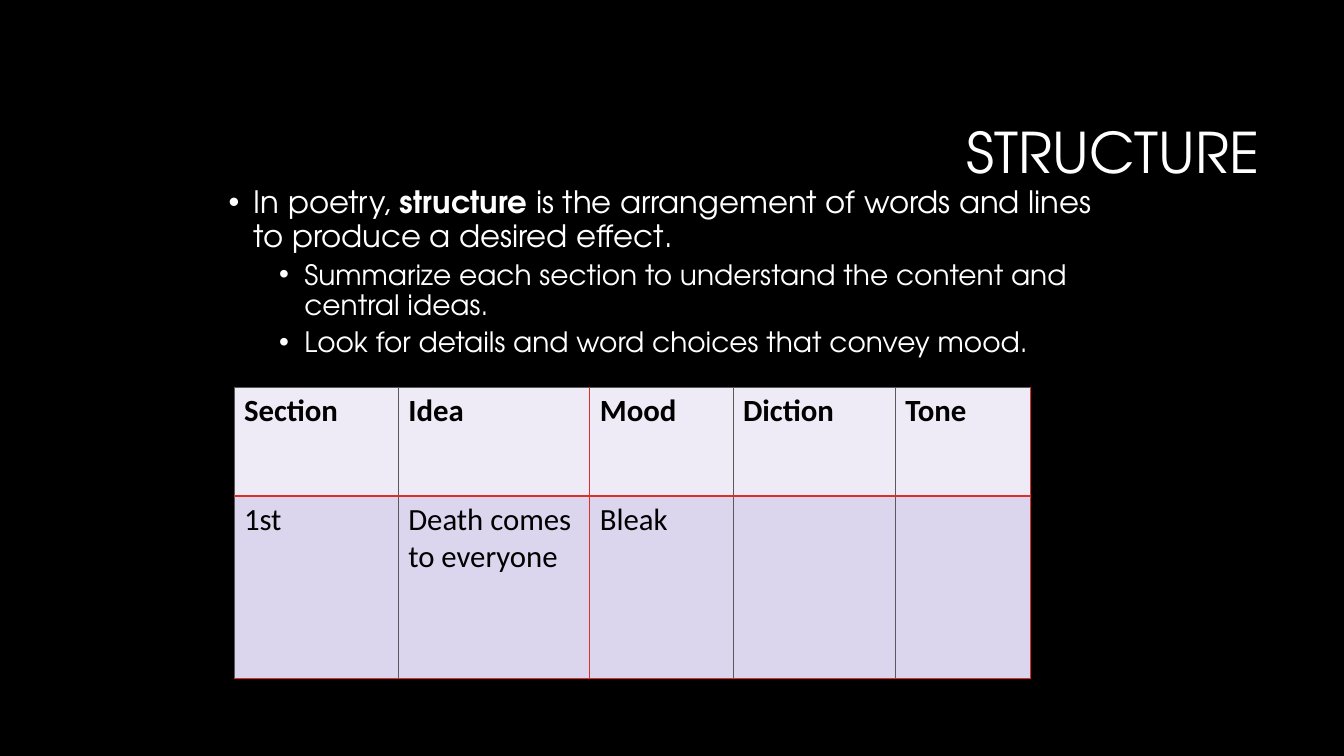
from lxml import etree
from pptx import Presentation
from pptx.dml.color import RGBColor
from pptx.enum.text import MSO_ANCHOR, PP_ALIGN
from pptx.oxml.ns import qn
from pptx.util import Inches, Pt

RIGHT = PP_ALIGN.RIGHT
TOP, MIDDLE = MSO_ANCHOR.TOP, MSO_ANCHOR.MIDDLE

HEADING_FONT = "TeX Gyre Adventor"
TABLE_FONT = "Calibri"
BLACK, WHITE, RED, GRAY = "000000", "FFFFFF", "DF2E28", "595959"

# Text, level, size and space before; each run is (text, bold)
BULLETS = [
    ([("In poetry, ", False), ("structure ", True),
      ("is the arrangement of words and lines to produce a desired effect.", False)], 0, 22, 0),
    ([("Summarize each section to understand the content and central ideas.", False)], 1, 20, 5),
    ([("Look for details and word choices that convey mood.", False)], 1, 20, 5),
]

COLUMN_WIDTHS = [1.63, 1.9, 1.42, 1.61, 1.34]
ROW_HEIGHTS = [1.08, 1.81]
ROW_FILLS = ["EEEBF7", "DBD5EE"]
ROWS = [
    ["Section", "Idea", "Mood", "Diction", "Tone"],
    ["1st", "Death comes to everyone", "Bleak", "", ""],
]
# Colour and width of the rules, from left to right and from top to bottom
THIN_GRAY, THIN_RED, THICK_RED = (GRAY, 0.5), (RED, 1), (RED, 1.5)
COLUMN_RULES = [THIN_GRAY, THIN_GRAY, THIN_RED, THIN_GRAY, THIN_GRAY, THIN_RED]
ROW_RULES = [THIN_GRAY, THICK_RED, THIN_RED]


def color(value):
    return RGBColor.from_string(value)


def add_run(paragraph, text, font_name, size, font_color, bold=False):
    run = paragraph.add_run()
    run.text = text
    run.font.name = font_name
    run.font.size = Pt(size)
    run.font.bold = bold
    run.font.color.rgb = color(font_color)


def add_text_frame(slide, left, top, width, height, anchor):
    box = slide.shapes.add_textbox(Inches(left), Inches(top), Inches(width), Inches(height))
    frame = box.text_frame
    frame.word_wrap = True
    frame.vertical_anchor = anchor
    return frame


def add_title(slide, text):
    paragraph = add_text_frame(slide, 3.17, 0.84, 9.42, 1.41, MIDDLE).paragraphs[0]
    paragraph.alignment = RIGHT
    paragraph.line_spacing = 0.9
    add_run(paragraph, text, HEADING_FONT, 40, WHITE)


def set_bullet(paragraph, level):
    properties = paragraph._p.get_or_add_pPr()
    properties.set("marL", str(Inches(0.25 + 0.5 * level)))
    properties.set("indent", str(Inches(-0.25)))
    etree.SubElement(properties, qn("a:buFont")).set("typeface", "Arial")
    etree.SubElement(properties, qn("a:buChar")).set("char", "•")


def add_bullets(slide):
    frame = add_text_frame(slide, 2.17, 1.81, 9, 5.14, TOP)
    for index, (runs, level, size, space_before) in enumerate(BULLETS):
        paragraph = frame.add_paragraph() if index else frame.paragraphs[0]
        set_bullet(paragraph, level)
        paragraph.level = level
        paragraph.line_spacing = 0.9
        paragraph.space_before = Pt(space_before)
        for text, bold in runs:
            add_run(paragraph, text, HEADING_FONT, size, WHITE, bold)


def set_borders(cell, rules):
    properties = cell._tc.get_or_add_tcPr()
    for side, (line_color, width) in zip("LRTB", rules):
        line = etree.SubElement(properties, qn(f"a:ln{side}"))
        line.set("w", str(Pt(width)))
        fill = etree.SubElement(line, qn("a:solidFill"))
        etree.SubElement(fill, qn("a:srgbClr")).set("val", line_color)


def add_section_table(slide):
    table = slide.shapes.add_table(
        len(ROWS), len(COLUMN_WIDTHS), Inches(2.32), Inches(3.84),
        Inches(sum(COLUMN_WIDTHS)), Inches(sum(ROW_HEIGHTS))).table
    for column, width in zip(table.columns, COLUMN_WIDTHS):
        column.width = Inches(width)
    for row_index, texts in enumerate(ROWS):
        table.rows[row_index].height = Inches(ROW_HEIGHTS[row_index])
        for column_index, text in enumerate(texts):
            cell = table.cell(row_index, column_index)
            set_borders(cell, COLUMN_RULES[column_index:column_index + 2]
                        + ROW_RULES[row_index:row_index + 2])
            cell.fill.solid()
            cell.fill.fore_color.rgb = color(ROW_FILLS[row_index])
            if text:
                add_run(cell.text_frame.paragraphs[0], text, TABLE_FONT, 22, BLACK,
                        bold=row_index == 0)


def main():
    presentation = Presentation()
    presentation.slide_width = Inches(13.33)
    presentation.slide_height = Inches(7.5)
    slide = presentation.slides.add_slide(presentation.slide_layouts[6])

    # Black background
    slide.background.fill.solid()
    slide.background.fill.fore_color.rgb = color(BLACK)

    # Heading, definition and section table
    add_title(slide, "STRUCTURE")
    add_bullets(slide)
    add_section_table(slide)

    presentation.save("out.pptx")


if __name__ == "__main__":
    main()
